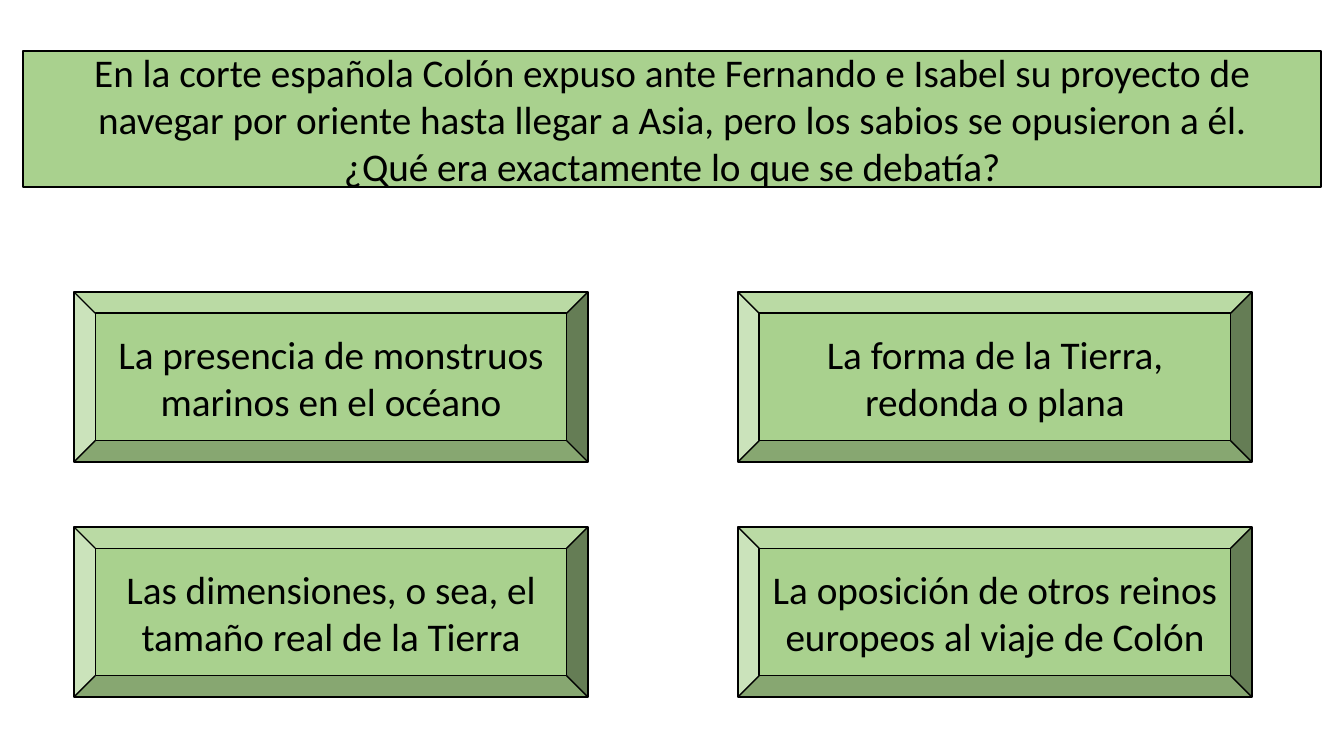
"""Build a quiz slide with one question and four bevelled answers."""
from pptx import Presentation
from pptx.dml.color import RGBColor
from pptx.enum.shapes import MSO_SHAPE as Shape
from pptx.enum.text import MSO_ANCHOR as Anchor, MSO_AUTO_SIZE as Fit, PP_ALIGN as Align
from pptx.util import Pt

QUESTION = [
    "En la corte española Colón expuso ante Fernando e Isabel su proyecto de "
    "navegar por oriente hasta llegar a Asia, pero los sabios se opusieron a él.",
    "¿Qué era exactamente lo que se debatía?",
]
ANSWERS = [
    "La presencia de monstruos marinos en el océano",
    "La forma de la Tierra, redonda o plana",
    "Las dimensiones, o sea, el tamaño real de la Tierra",
    "La oposición de otros reinos europeos al viaje de Colón",
]
GREEN = RGBColor(0xA9, 0xD1, 0x8E)
BLACK = RGBColor(0, 0, 0)
WIDE, HIGH = 1344, 756
HEAD = (23, 51, 1298, 136)
LEFT, TOP = 74, 292
STEP_X, STEP_Y = 664, 235
BOX_W, BOX_H = 514, 170


def px(n):
    return round(n * 12192000 / WIDE)


def style(shape, lines):
    shape.fill.solid()
    shape.fill.fore_color.rgb = GREEN
    shape.line.color.rgb = BLACK
    shape.line.width = Pt(1)
    frame = shape.text_frame
    frame.text = "\n".join(lines)
    frame.word_wrap = True
    frame.auto_size = Fit.NONE
    frame.vertical_anchor = Anchor.MIDDLE
    for para in frame.paragraphs:
        para.alignment = Align.CENTER
        para.line_spacing = 1.0
        para.space_before = Pt(0)
        for run in para.runs:
            run.font.name = "Calibri"
            run.font.size = Pt(28)
            run.font.color.rgb = BLACK


def main():
    deck = Presentation()
    deck.slide_width, deck.slide_height = px(WIDE), px(HIGH)
    slide = deck.slides.add_slide(deck.slide_layouts[5])
    title = slide.shapes.title
    title.left, title.top, title.width, title.height = map(px, HEAD)
    style(title, QUESTION)
    for i, answer in enumerate(ANSWERS):
        row, col = divmod(i, 2)
        spot = (LEFT + col * STEP_X, TOP + row * STEP_Y, BOX_W, BOX_H)
        box = slide.shapes.add_shape(Shape.BEVEL, *map(px, spot))
        box.shadow.inherit = False
        style(box, [answer])
    deck.save("out.pptx")


if __name__ == "__main__":
    main()
